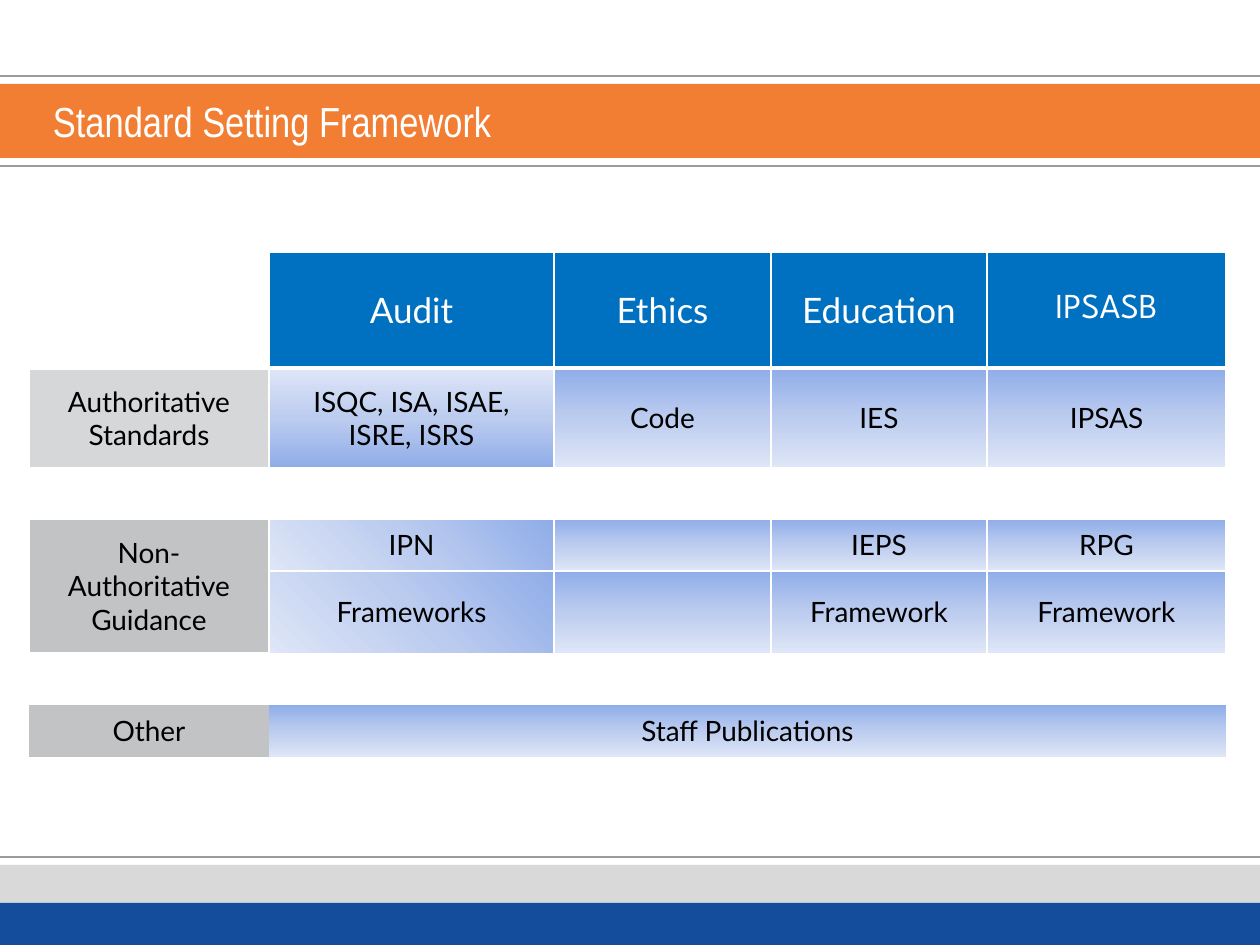
from lxml import etree
from pptx import Presentation
from pptx.dml.color import RGBColor
from pptx.enum import shapes, text
from pptx.oxml.ns import qn
from pptx import util as u

PX = 914400 / 126
COLORS = {
    "white": "FFFFFF", "black": "000000", "orange": "F17E32", "rule": "999B9D",
    "footer": "D9D9D9", "navy": "134D9C", "header": "0070C0",
    "light": "D6D7D8", "mid": "C2C3C4",
}
STOPS = ((0, "8FADE9"), (50, "BCCCEF"), (100, "DEE6F7"))
DOWN, UP, DIAGONAL = 90, 270, 135
COLUMNS = (240, 285, 217, 216, 239)
ROWS = (116, 100, 51, 52, 82, 52, 52)
CELLS = (
    (("", None), ("Audit", "header"), ("Ethics", "header"),
     ("Education", "header"), ("IPSASB", "header")),
    (("Authoritative\nStandards", "light"), ("ISQC, ISA, ISAE,\nISRE, ISRS", UP),
     ("Code", DOWN), ("IES", DOWN), ("IPSAS", DOWN)),
    (("", None),) * 5,
    (("Non-Authoritative\nGuidance", "mid"), ("IPN", DIAGONAL), ("", DOWN),
     ("IEPS", DOWN), ("RPG", DOWN)),
    (("", None), ("Frameworks", DIAGONAL), ("", DOWN),
     ("Framework", DOWN), ("Framework", DOWN)),
    (("", None),) * 5,
    (("Other", "mid"), ("Staff Publications", DOWN)) + (("", None),) * 3,
)


def px(n):
    """Turn pixels into EMU."""
    return u.Emu(round(n * PX))


def rgb(name):
    """Look up a named colour."""
    return RGBColor.from_string(COLORS[name])


def add_band(s, x, y, w, h, color):
    """Draw a plain filled rectangle."""
    sp = s.shapes.add_shape(shapes.MSO_SHAPE.RECTANGLE, px(x), px(y), px(w), px(h))
    sp.shadow.inherit = False
    sp.fill.solid()
    sp.fill.fore_color.rgb = rgb(color)
    sp.line.fill.background()


def add_rule(s, x, y, w):
    """Draw a thin horizontal rule."""
    line = s.shapes.add_connector(
        shapes.MSO_CONNECTOR.STRAIGHT, px(x), px(y), px(x + w), px(y))
    line.line.color.rgb = rgb("rule")
    line.line.width = u.Pt(0.75)
    etree.SubElement(line._element.spPr, qn("a:effectLst"))


def add_title(s, x, y, w, h, title):
    """Draw the title band with its two rules and text."""
    add_band(s, x, y, w, h, "orange")
    add_rule(s, x, y - 8, w)
    add_rule(s, x, y + h + 8, w)
    tf = s.shapes.add_textbox(px(x + 53), px(y), px(1040), px(h)).text_frame
    tf.word_wrap = True
    tf.vertical_anchor = text.MSO_ANCHOR.MIDDLE
    tf.margin_left = tf.margin_right = tf.margin_top = tf.margin_bottom = 0
    p = tf.paragraphs[0]
    p.text = title
    p.font.name, p.font.size = "Arial Narrow", u.Pt(24)
    p.font.color.rgb = rgb("white")


def add_footer(s, x, y, w, h):
    """Draw the footer rule and its two bands."""
    add_rule(s, x, y - 8, w)
    add_band(s, x, y, w, h, "footer")
    add_band(s, x, y + 38, w, h - 38, "navy")


def add_solid(parent, color):
    """Append a solid fill element."""
    fill = etree.SubElement(parent, qn("a:solidFill"))
    etree.SubElement(fill, qn("a:srgbClr"), val=color)


def set_borders(cell, widths):
    """Set left, right, top and bottom borders; zero hides one."""
    for side, width in zip("LRTB", widths):
        ln = etree.SubElement(
            cell._tc.get_or_add_tcPr(), qn(f"a:ln{side}"), w=str(u.Pt(width)))
        if width:
            add_solid(ln, COLORS["white"])
        else:
            etree.SubElement(ln, qn("a:noFill"))


def set_fill(cell, fill):
    """Fill a cell with a named colour, a gradient angle or nothing."""
    if fill is None:
        cell.fill.background()
    elif isinstance(fill, str):
        cell.fill.solid()
        cell.fill.fore_color.rgb = rgb(fill)
    else:
        grad = etree.SubElement(cell._tc.get_or_add_tcPr(), qn("a:gradFill"))
        stops = etree.SubElement(grad, qn("a:gsLst"))
        for pos, color in STOPS:
            gs = etree.SubElement(stops, qn("a:gs"), pos=str(pos * 1000))
            etree.SubElement(gs, qn("a:srgbClr"), val=color)
        etree.SubElement(grad, qn("a:lin"), ang=str(fill * 60000), scaled="0")


def set_text(cell, words, size, font, color):
    """Write centred paragraphs into a cell."""
    cell.margin_left = cell.margin_right = px(8)
    cell.margin_top = cell.margin_bottom = px(4)
    cell.vertical_anchor = text.MSO_ANCHOR.MIDDLE
    cell.text = words
    for p in cell.text_frame.paragraphs:
        p.alignment = text.PP_ALIGN.CENTER
        p.font.name, p.font.size = font, u.Pt(size)
        p.font.color.rgb = rgb(color)


def add_framework(s, x, y):
    """Draw the standards table."""
    table = s.shapes.add_table(
        len(ROWS), len(COLUMNS), px(x), px(y), px(sum(COLUMNS)), px(sum(ROWS))).table
    table.first_row = table.horz_banding = False
    for column, width in zip(table.columns, COLUMNS):
        column.width = px(width)
    for i, (height, row) in enumerate(zip(ROWS, CELLS)):
        table.rows[i].height = px(height)
        for j, (words, fill) in enumerate(row):
            cell = table.cell(i, j)
            if i == 0:
                font = "League Spartan" if words == "IPSASB" else "Lato"
                set_text(cell, words, 20, font, "white")
                set_borders(cell, (1, 1, 1, 3))
            else:
                set_text(cell, words, 16, "Lato", "black")
                top = 3 if i == 1 else 1
                set_borders(cell, (1, 1, top, int(i < 4)) if i < 5 else (0,) * 4)
            set_fill(cell, fill)
    table.cell(3, 0).merge(table.cell(4, 0))
    for i in (5, 6):
        table.cell(i, 1).merge(table.cell(i, 4))


def main():
    """Build and save the slide."""
    prs = Presentation()
    prs.slide_width, prs.slide_height = px(1260), px(945)
    s = prs.slides.add_slide(prs.slide_layouts[6])
    add_title(s, 0, 84, 1260, 74, "Standard Setting Framework")
    add_footer(s, 0, 865, 1260, 80)
    add_framework(s, 29, 252)
    prs.save("out.pptx")


if __name__ == "__main__":
    main()
